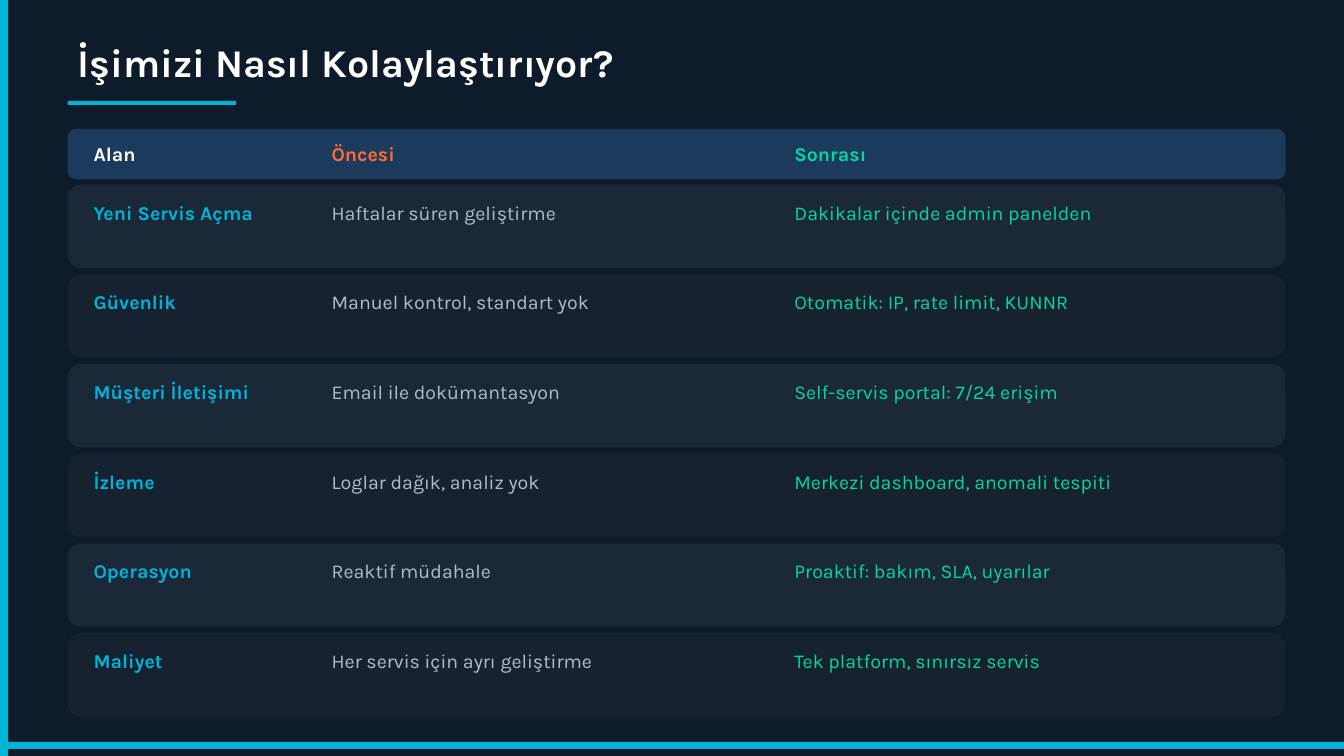
from pptx import Presentation
from pptx import util as u
from pptx.dml.color import RGBColor
from pptx.enum import shapes, text

TITLE = "İşimizi Nasıl Kolaylaştırıyor?"
HEADINGS = ("Alan", "Öncesi", "Sonrası")
AREAS = [
    ("Yeni Servis Açma", "Haftalar süren geliştirme", "Dakikalar içinde admin panelden"),
    ("Güvenlik", "Manuel kontrol, standart yok", "Otomatik: IP, rate limit, KUNNR"),
    ("Müşteri İletişimi", "Email ile dokümantasyon", "Self-servis portal: 7/24 erişim"),
    ("İzleme", "Loglar dağık, analiz yok", "Merkezi dashboard, anomali tespiti"),
    ("Operasyon", "Reaktif müdahale", "Proaktif: bakım, SLA, uyarılar"),
    ("Maliyet", "Her servis için ayrı geliştirme", "Tek platform, sınırsız servis"),
]

COLORS = {
    "night": "0D1B2A", "cyan": "00B4D8", "white": "FFFFFF", "header": "1B3A5C",
    "light_row": "1B2838", "dark_row": "162230", "orange": "FF6B35",
    "green": "06D6A0", "grey": "B0BEC5",
}
HEADING_STYLES = (("white", True), ("orange", True), ("green", True))
AREA_STYLES = (("cyan", True), ("grey", False), ("green", False))
COLUMNS = ((0.83, 2.03), (3.19, 4.25), (7.78, 4.81))

WIDTH, HEIGHT = 13.33, 7.5
LEFT, CONTENT_WIDTH = 0.67, 12.08
HEADER_TOP, HEADER_HEIGHT, HEADER_PAD = 1.28, 0.5, 0.08
ROWS_TOP, ROW_HEIGHT, ROW_PITCH, ROW_PAD = 1.83, 0.83, 0.89, 0.11


def color(name):
    return RGBColor.from_string(COLORS[name])


def add_block(slide, box, fill, kind=shapes.MSO_SHAPE.RECTANGLE):
    block = slide.shapes.add_shape(kind, *map(u.Inches, box))
    block.shadow.inherit = False
    block.fill.solid()
    block.fill.fore_color.rgb = color(fill)
    block.line.fill.background()


def write(holder, words, size, ink, bold):
    frame = holder.text_frame
    frame_format = {"word_wrap": True, "auto_size": text.MSO_AUTO_SIZE.NONE,
                    "vertical_anchor": text.MSO_ANCHOR.TOP}
    for name, value in frame_format.items():
        setattr(frame, name, value)
    frame.text = words
    line = frame.paragraphs[0]
    line.alignment = text.PP_ALIGN.LEFT
    font = line.runs[0].font
    for name, value in {"name": "Karla", "size": u.Pt(size), "bold": bold}.items():
        setattr(font, name, value)
    font.color.rgb = color(ink)


def add_row(slide, entries, styles, top, height, pad, fill):
    add_block(slide, (LEFT, top, CONTENT_WIDTH, height), fill,
              shapes.MSO_SHAPE.ROUNDED_RECTANGLE)
    for words, (ink, bold), (left, width) in zip(entries, styles, COLUMNS):
        cell = slide.shapes.add_textbox(
            *map(u.Inches, (left, top + pad, width, height - 2 * pad)))
        write(cell, words, 14, ink, bold)


def main():
    deck = Presentation()
    deck.slide_width, deck.slide_height = u.Inches(WIDTH), u.Inches(HEIGHT)
    slide = deck.slides.add_slide(deck.slide_layouts[5])
    slide.background.fill.solid()
    slide.background.fill.fore_color.rgb = color("night")

    title = slide.shapes.title
    title_place = dict(left=LEFT, top=0.33, width=CONTENT_WIDTH, height=0.58)
    for name, value in title_place.items():
        setattr(title, name, u.Inches(value))
    write(title, TITLE, 28, "white", True)

    accents = ((0, 0, 0.08, HEIGHT), (LEFT, 1, 1.67, 0.04), (0, 7.36, WIDTH, 0.07))
    for accent in accents:
        add_block(slide, accent, "cyan")

    add_row(slide, HEADINGS, HEADING_STYLES, HEADER_TOP, HEADER_HEIGHT, HEADER_PAD, "header")
    for index, area in enumerate(AREAS):
        add_row(slide, area, AREA_STYLES, ROWS_TOP + index * ROW_PITCH, ROW_HEIGHT,
                ROW_PAD, ("light_row", "dark_row")[index % 2])

    deck.save("out.pptx")


if __name__ == "__main__":
    main()
